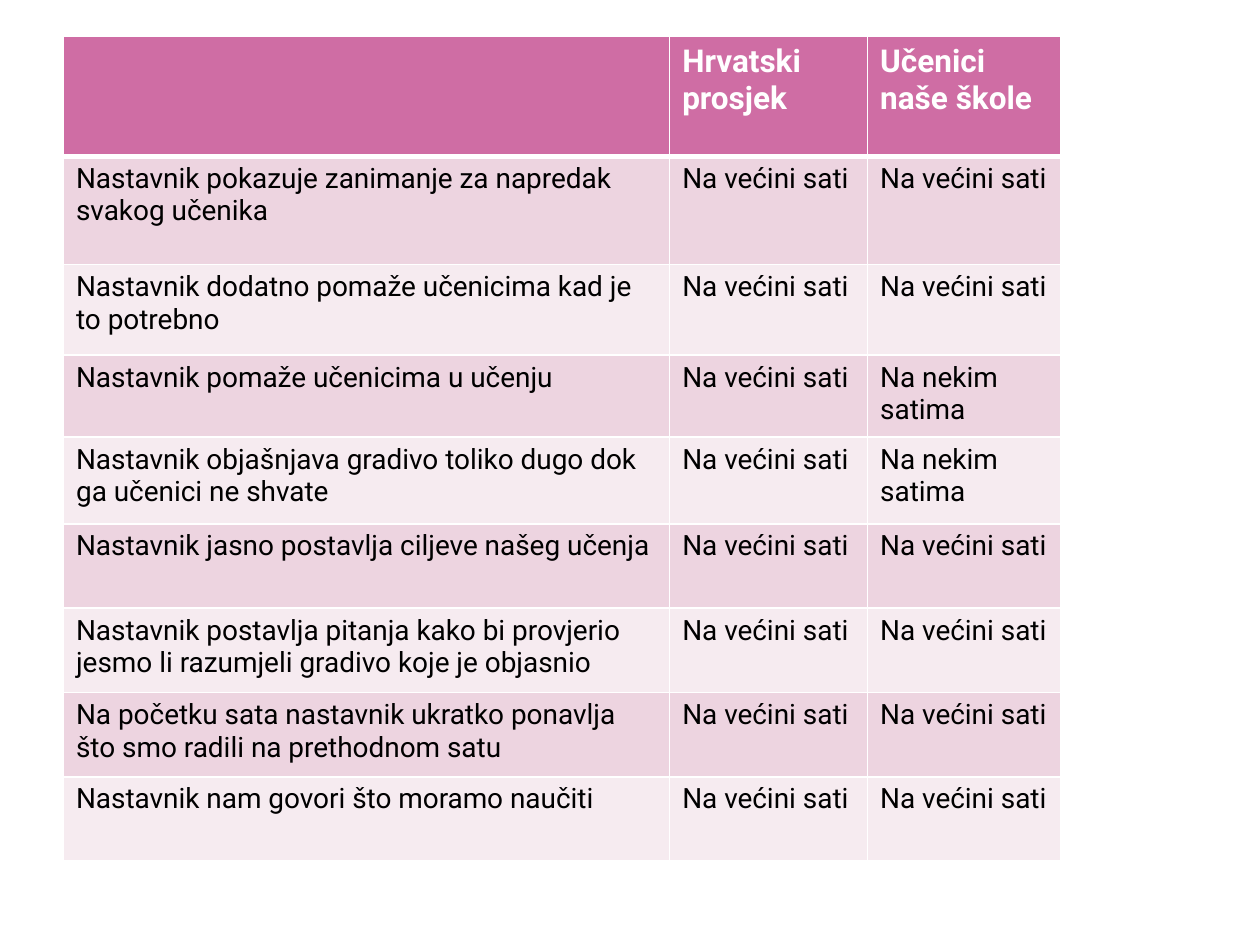
from lxml import etree
from pptx import Presentation
from pptx.dml.color import RGBColor
from pptx.oxml.ns import qn
from pptx.util import Cm, Pt

# Content
MOST, SOME = "Na većini sati", "Na nekim satima"
HEAD = ("", "Hrvatski prosjek", "Učenici naše škole")
ROWS = [
    ("Nastavnik pokazuje zanimanje za napredak svakog učenika", MOST, MOST),
    ("Nastavnik dodatno pomaže učenicima kad je to potrebno", MOST, MOST),
    ("Nastavnik pomaže učenicima u učenju", MOST, SOME),
    ("Nastavnik objašnjava gradivo toliko dugo dok ga učenici ne shvate", MOST, SOME),
    ("Nastavnik jasno postavlja ciljeve našeg učenja", MOST, MOST),
    ("Nastavnik postavlja pitanja kako bi provjerio jesmo li razumjeli "
     "gradivo koje je objasnio", MOST, MOST),
    ("Na početku sata nastavnik ukratko ponavlja što smo radili na "
     "prethodnom satu", MOST, MOST),
    ("Nastavnik nam govori što moramo naučiti", MOST, MOST),
]

# Layout in centimetres
LEFT, TOP = 1.28, 0.74
WIDTHS = [12.22, 3.99, 3.9]
HEIGHTS = [2.41, 2.18, 1.83, 1.65, 1.75] + [1.7] * 4

THEME = {
    "font": "Roboto",
    "head": {"fill": "CF6DA4", "text": "FFFFFF", "size": 18},
    "body": {"fills": ("EDD4E0", "F6EBF0"), "text": "000000", "size": 16},
    "line": "FFFFFF", "thin": 1, "thick": 3,
}


def add_edge(cell, side, width):
    props = cell._tc.get_or_add_tcPr()
    line = etree.SubElement(props, qn("a:ln" + side), w=str(Pt(width)))
    fill = etree.SubElement(line, qn("a:solidFill"))
    etree.SubElement(fill, qn("a:srgbClr"), val=THEME["line"])


def style_cell(cell, row):
    is_head = row == 0
    look = THEME["head" if is_head else "body"]
    thin, thick = THEME["thin"], THEME["thick"]

    # Edges come before the fill; a thick rule closes the header
    edges = {"L": thin, "R": thin,
             "T": thick if row == 1 else thin,
             "B": thick if is_head else thin}
    for side, width in edges.items():
        add_edge(cell, side, width)

    color = look["fill"] if is_head else look["fills"][(row - 1) % 2]
    cell.fill.solid()
    cell.fill.fore_color.rgb = RGBColor.from_string(color)

    font = cell.text_frame.paragraphs[0].font
    font.name = THEME["font"]
    font.size = Pt(look["size"])
    font.bold = is_head
    font.color.rgb = RGBColor.from_string(look["text"])


def main():
    deck = Presentation()
    deck.slide_width, deck.slide_height = Cm(25.4), Cm(19.05)
    slide = deck.slides.add_slide(deck.slide_layouts[6])

    # Survey table
    data = [HEAD] + ROWS
    table = slide.shapes.add_table(
        len(data), len(HEAD), Cm(LEFT), Cm(TOP),
        Cm(sum(WIDTHS)), Cm(sum(HEIGHTS))).table
    for col, width in zip(table.columns, WIDTHS):
        col.width = Cm(width)
    for row, height in zip(table.rows, HEIGHTS):
        row.height = Cm(height)

    # Cells
    for r, texts in enumerate(data):
        for c, text in enumerate(texts):
            cell = table.cell(r, c)
            cell.text = text
            style_cell(cell, r)

    deck.save("out.pptx")


if __name__ == "__main__":
    main()
